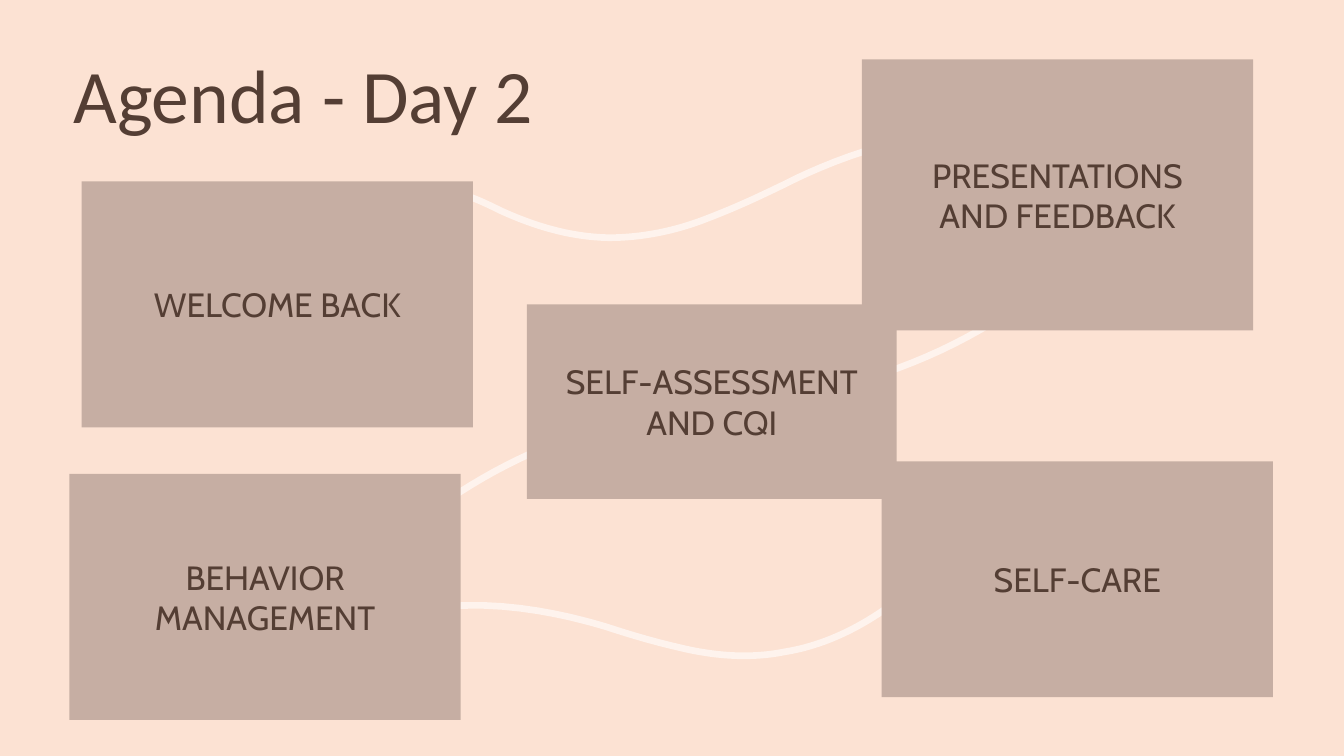
from dataclasses import dataclass

from pptx import Presentation
from pptx.dml.color import RGBColor as Rgb
from pptx.enum.shapes import MSO_SHAPE as Preset
from pptx.enum.text import MSO_ANCHOR as Anchor, PP_ALIGN as Align
from pptx.util import Cm, Pt


@dataclass(frozen=True)
class Theme:
    background: str = "FCE2D3"
    card: str = "C6AEA3"
    ribbon: str = "FEF3ED"
    ink: str = "543E34"
    title_font: str = "Calibri"
    card_font: str = "Cabin"
    title_size: float = 54
    card_size: float = 24
    ribbon_width: float = 4.75


def apply_formats(target, formats):
    for name, value in formats.items():
        setattr(target, name, value)


def bezier(start, control_1, control_2, end, steps=16):
    """Points along one cubic curve, without its start."""
    for step in range(1, steps + 1):
        t = step / steps
        weights = ((1 - t) ** 3, 3 * t * (1 - t) ** 2, 3 * t * t * (1 - t), t ** 3)
        yield tuple(
            Cm(sum(w * c for w, c in zip(weights, axis)))
            for axis in zip(start, control_1, control_2, end)
        )


class AgendaSlide:
    def __init__(self, deck, theme):
        self.theme = theme
        self.slide = deck.slides.add_slide(deck.slide_layouts[6])
        fill = self.slide.background.fill
        fill.solid()
        fill.fore_color.rgb = Rgb.from_string(theme.background)

    def set_text(self, shape, lines, font, size, **paragraph_formats):
        frame = shape.text_frame
        apply_formats(frame, {"word_wrap": True, "vertical_anchor": Anchor.MIDDLE})
        frame.text = "\n".join(lines)
        for paragraph in frame.paragraphs:
            apply_formats(paragraph, paragraph_formats)
            apply_formats(paragraph.font, {"name": font, "size": Pt(size)})
            paragraph.font.color.rgb = Rgb.from_string(self.theme.ink)

    def title(self, text, *box):
        heading = self.slide.shapes.add_textbox(*map(Cm, box))
        self.set_text(heading, [text], self.theme.title_font, self.theme.title_size,
                      alignment=Align.LEFT, line_spacing=0.9)

    def card(self, lines, *box):
        card = self.slide.shapes.add_shape(Preset.RECTANGLE, *map(Cm, box))
        card.shadow.inherit = False
        card.fill.solid()
        card.fill.fore_color.rgb = Rgb.from_string(self.theme.card)
        card.line.fill.background()
        self.set_text(card, lines, self.theme.card_font, self.theme.card_size,
                      alignment=Align.CENTER)

    def ribbon(self, knots):
        """Draw chained cubic curves: a start, then three points per curve."""
        builder = self.slide.shapes.build_freeform(*map(Cm, knots[0]))
        for first in range(0, len(knots) - 1, 3):
            builder.add_line_segments(bezier(*knots[first:first + 4]), close=False)
        ribbon = builder.convert_to_shape()
        ribbon.shadow.inherit = False
        ribbon.fill.background()
        ribbon.line.color.rgb = Rgb.from_string(self.theme.ribbon)
        ribbon.line.width = Pt(self.theme.ribbon_width)


# Ribbons between the cards, in cm
RIBBONS = [
    # Self-assessment to presentations
    [(21.16, 9.73), (23.19, 9.22), (25.02, 8.31), (26.59, 6.99)],
    # Self-assessment to behavior management
    [(14.83, 10.87), (12.93, 11.48), (11.3, 12.45), (9.88, 13.69)],
    # Welcome to presentations
    [(7.8, 5.66), (8.89, 4.75), (10.11, 4.5), (11.4, 4.83),
     (11.84, 4.93), (12.22, 5.11), (12.62, 5.31),
     (13.46, 5.69), (14.35, 5.97), (15.34, 5.99),
     (16.18, 5.99), (17.02, 5.82), (17.81, 5.51),
     (18.72, 5.16), (19.23, 4.9), (19.76, 4.65),
     (20.35, 4.34), (23.88, 2.62), (26.09, 3.71)],
    # Self-care to behavior management
    [(23.37, 14.71), (22.96, 14.88), (22.63, 15.11), (22.28, 15.37),
     (21.54, 15.88), (20.7, 16.28), (19.76, 16.43),
     (18.95, 16.59), (18.14, 16.54), (17.3, 16.36),
     (16.38, 16.15), (15.85, 15.98), (15.29, 15.8),
     (14.68, 15.62), (11.02, 14.48), (8.81, 16.15)],
]

# Agenda cards: lines, left, top, width, height in cm
CARD_WIDTH = 9.86
CARDS = [
    (["PRESENTATIONS", "AND FEEDBACK"], 21.72, 1.5, CARD_WIDTH, 6.83),
    (["WELCOME BACK"], 2.06, 4.57, CARD_WIDTH, 6.2),
    (["SELF-ASSESSMENT", "AND CQI"], 13.28, 7.67, 9.32, 4.9),
    (["SELF-CARE"], 22.22, 11.63, CARD_WIDTH, 5.94),
    (["BEHAVIOR MANAGEMENT"], 1.75, 11.94, CARD_WIDTH, 6.2),
]


def main():
    deck = Presentation()
    apply_formats(deck, {"slide_width": Cm(33.87), "slide_height": Cm(19.05)})
    agenda = AgendaSlide(deck, Theme())

    # Ribbons lie behind the cards
    for knots in RIBBONS:
        agenda.ribbon(knots)
    for card in CARDS:
        agenda.card(*card)

    # Heading
    agenda.title("Agenda - Day 2", 1.6, 1.3, 15.6, 2.4)
    deck.save("out.pptx")


if __name__ == "__main__":
    main()
